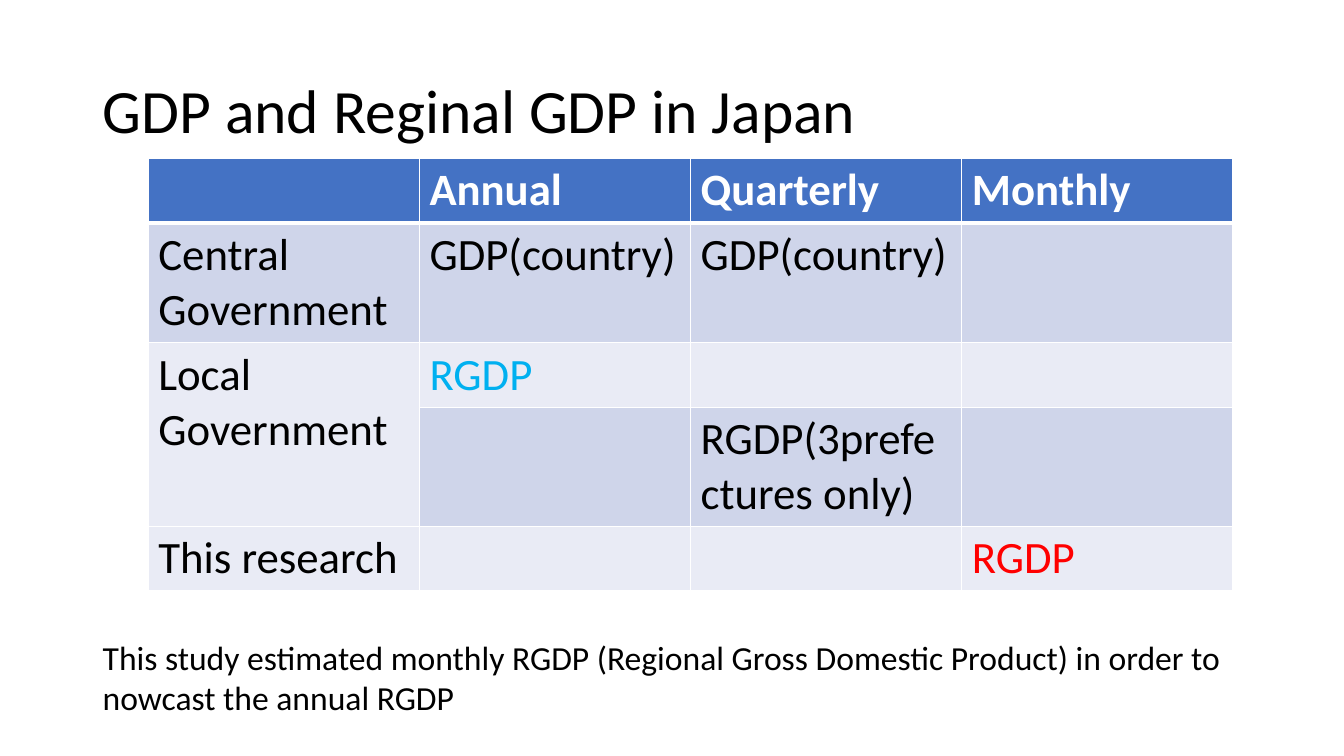
from lxml import etree
from pptx import Presentation
from pptx.dml.color import RGBColor
from pptx.enum.text import MSO_ANCHOR
from pptx.oxml.ns import qn
from pptx.util import Inches, Pt

TOP, MIDDLE = MSO_ANCHOR.TOP, MSO_ANCHOR.MIDDLE

BLACK = RGBColor(0x00, 0x00, 0x00)
WHITE = RGBColor(0xFF, 0xFF, 0xFF)
HEADER_BLUE = RGBColor(0x44, 0x72, 0xC4)
BAND_DARK = RGBColor(0xCF, 0xD5, 0xEA)
BAND_LIGHT = RGBColor(0xE9, 0xEB, 0xF5)
ANNUAL_CYAN = RGBColor(0x00, 0xB0, 0xF0)
MONTHLY_RED = RGBColor(0xFF, 0x00, 0x00)

AVAILABILITY = [
    ["", "Annual", "Quarterly", "Monthly"],
    ["Central Government", "GDP(country)", "GDP(country)", ""],
    ["Local Government", "RGDP", "", ""],
    ["", "", "RGDP(3prefectures only)", ""],
    ["This research", "", "", "RGDP"],
]
HIGHLIGHTS = {(2, 1): ANNUAL_CYAN, (4, 3): MONTHLY_RED}
ROW_HEIGHTS = [0.64, 1.19, 0.64, 1.18, 0.64]
COLUMN_WIDTH = 2.69


class SlideBuilder:
    font_name = "Calibri"

    def __init__(self, slide):
        self.slide = slide

    def style(self, paragraph, size, color, bold=False):
        font = paragraph.font
        font.name, font.size, font.bold = self.font_name, Pt(size), bold
        font.color.rgb = color

    def text(self, wording, left, top, width, height, size, anchor=TOP, line_spacing=1.0):
        box = self.slide.shapes.add_textbox(
            Inches(left), Inches(top), Inches(width), Inches(height))
        frame = box.text_frame
        frame.word_wrap = True
        frame.vertical_anchor = anchor
        paragraph = frame.paragraphs[0]
        paragraph.text = wording
        paragraph.line_spacing = line_spacing
        self.style(paragraph, size, BLACK)

    def borders(self, cell, bottom_width):
        properties = cell._tc.get_or_add_tcPr()
        for side, width in (("L", 1), ("R", 1), ("T", 1), ("B", bottom_width)):
            line = etree.SubElement(properties, qn(f"a:ln{side}"), w=str(Pt(width)))
            fill = etree.SubElement(line, qn("a:solidFill"))
            etree.SubElement(fill, qn("a:srgbClr"), val=str(WHITE))

    def table(self, rows, highlights, left, top, column_width, row_heights, size):
        columns = len(rows[0])
        table = self.slide.shapes.add_table(
            len(rows), columns, Inches(left), Inches(top),
            Inches(column_width * columns), Inches(sum(row_heights))).table
        for column in table.columns:
            column.width = Inches(column_width)
        for r, (wordings, height) in enumerate(zip(rows, row_heights)):
            table.rows[r].height = Inches(height)
            header = r == 0
            band = HEADER_BLUE if header else BAND_DARK if r % 2 else BAND_LIGHT
            for c, wording in enumerate(wordings):
                cell = table.cell(r, c)
                self.borders(cell, 3 if header else 1)
                cell.fill.solid()
                cell.fill.fore_color.rgb = band
                if wording:
                    cell.text = wording
                    color = WHITE if header else highlights.get((r, c), BLACK)
                    self.style(cell.text_frame.paragraphs[0], size, color, header)
        return table


def main():
    presentation = Presentation()
    presentation.slide_width = Inches(13.33)
    presentation.slide_height = Inches(7.5)
    builder = SlideBuilder(presentation.slides.add_slide(presentation.slide_layouts[6]))

    # Title
    builder.text("GDP and Reginal GDP in Japan", 0.92, 0.4, 11.5, 1.45, 44, MIDDLE, 0.9)

    # Availability of GDP figures by publisher and frequency
    availability = builder.table(
        AVAILABILITY, HIGHLIGHTS, 1.47, 1.57, COLUMN_WIDTH, ROW_HEIGHTS, 32)
    availability.cell(2, 0).merge(availability.cell(3, 0))

    # Aim of the study
    builder.text(
        "This study estimated monthly RGDP (Regional Gross Domestic Product) "
        "in order to nowcast the annual RGDP", 0.92, 6.27, 11.5, 0.91, 24)

    presentation.save("out.pptx")


if __name__ == "__main__":
    main()
